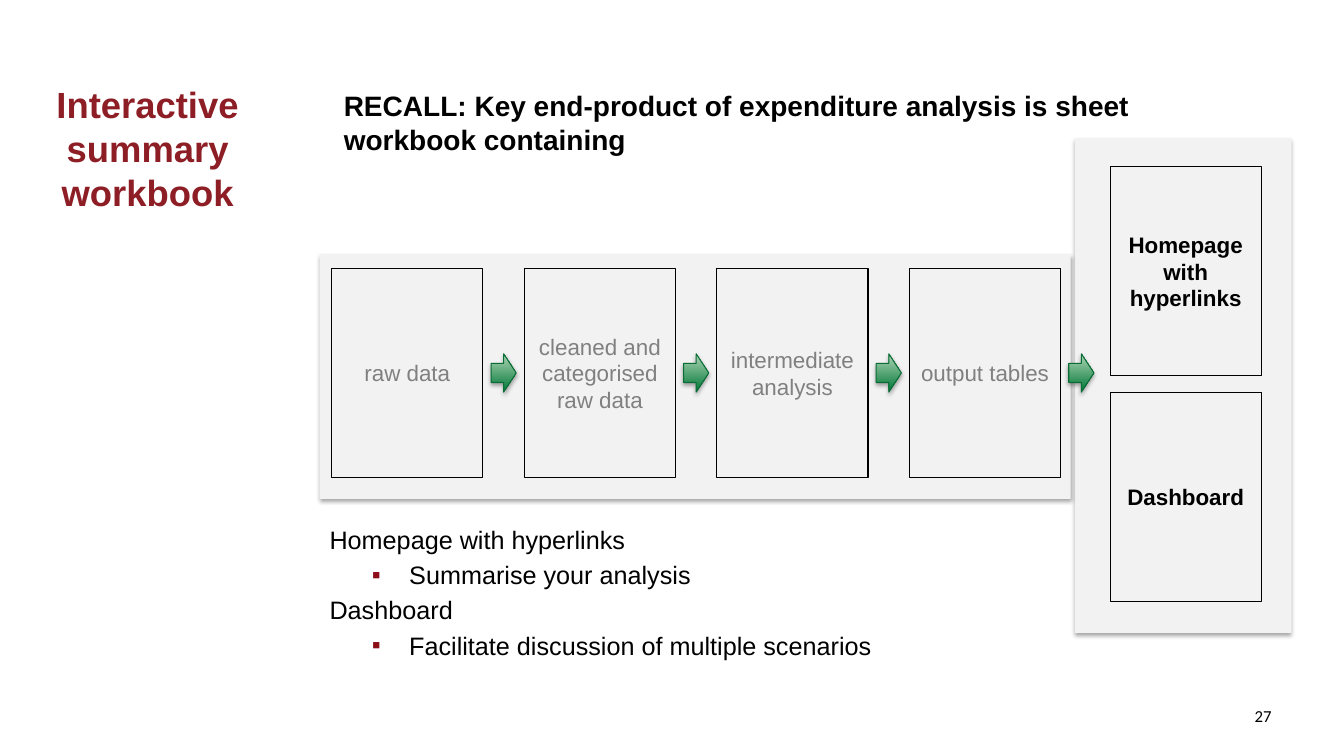
from lxml.etree import SubElement
from pptx import Presentation
from pptx.dml.color import RGBColor
from pptx.enum.shapes import MSO_SHAPE
from pptx.enum.text import MSO_ANCHOR, PP_ALIGN
from pptx.oxml.ns import qn
from pptx.util import Pt

PX = 9144
CARD_WIDTH, CARD_HEIGHT = 150, 208
ARROW_WIDTH, ARROW_HEIGHT = 25, 38
STEP_PITCH = 191
RESULT_PITCH = 224

HEADING = {"size": Pt(26), "bold": True, "color": "8E1E25"}
RECALL = {"size": Pt(20), "bold": True}
STEP = {"size": Pt(16), "color": "808080"}
RESULT = {"size": Pt(16), "bold": True}
POINT = {"size": Pt(18)}
PAGE_NUMBER = {"size": Pt(12), "name": "Calibri"}


def px(*lengths):
    """Turn px lengths into EMU."""
    return [length * PX for length in lengths]


def rgb(hex_string):
    """Turn a hex string into a colour."""
    return RGBColor.from_string(hex_string)


def write(paragraph, words, style, align=PP_ALIGN.LEFT):
    """Fill a paragraph with one styled run."""
    paragraph.alignment = align
    run = paragraph.add_run()
    run.text = words
    values = {"name": "Arial", "color": "000000", **style}
    run.font.color.rgb = rgb(values.pop("color"))
    for attribute, value in values.items():
        setattr(run.font, attribute, value)


def add_label(slide, box, words, style, align=PP_ALIGN.LEFT):
    """Place a wrapping one-paragraph text box and return its frame."""
    frame = slide.shapes.add_textbox(*px(*box)).text_frame
    frame.word_wrap = True
    write(frame.paragraphs[0], words, style, align)
    return frame


def cast_shadow(shape):
    """Give a shape a soft shadow below it."""
    shape.shadow.inherit = False
    effects = shape._element.spPr.find(qn("a:effectLst"))
    shadow = SubElement(effects, qn("a:outerShdw"), blurRad=str(Pt(3.1)),
                        dist=str(Pt(1.8)), dir="5400000", rotWithShape="0")
    color = SubElement(shadow, qn("a:srgbClr"), val="000000")
    SubElement(color, qn("a:alpha"), val="35000")


def add_panel(slide, box):
    """Draw a grey backing panel."""
    panel = slide.shapes.add_shape(MSO_SHAPE.RECTANGLE, *px(*box))
    panel.fill.solid()
    panel.fill.fore_color.rgb = rgb("F2F2F2")
    panel.line.fill.background()
    cast_shadow(panel)


def add_card(slide, left, top, words, style):
    """Draw an outlined card with centred words."""
    card = slide.shapes.add_shape(
        MSO_SHAPE.RECTANGLE, *px(left, top, CARD_WIDTH, CARD_HEIGHT))
    card.shadow.inherit = False
    card.fill.background()
    card.line.color.rgb = rgb("000000")
    card.line.width = Pt(0.75)
    frame = card.text_frame
    frame.word_wrap = True
    frame.vertical_anchor = MSO_ANCHOR.MIDDLE
    write(frame.paragraphs[0], words, style, PP_ALIGN.CENTER)


def add_arrow(slide, left, top):
    """Draw a green arrow to the next stage."""
    arrow = slide.shapes.add_shape(
        MSO_SHAPE.RIGHT_ARROW, *px(left, top, ARROW_WIDTH, ARROW_HEIGHT))
    arrow.fill.gradient()
    arrow.fill.gradient_angle = 90
    for stop, color in zip(arrow.fill.gradient_stops, ("007735", "AFD5B7")):
        stop.color.rgb = rgb(color)
    arrow.line.color.rgb = rgb("086C35")
    arrow.line.width = Pt(0.75)
    cast_shadow(arrow)


def add_results(slide, box, results):
    """Stack the result cards on their panel."""
    add_panel(slide, box)
    left, top = box[:2]
    for row, words in enumerate(results):
        add_card(slide, left + 35, top + 28 + row * RESULT_PITCH, words, RESULT)


def add_process(slide, box, steps):
    """Line up the step cards, each followed by an arrow."""
    add_panel(slide, box)
    left, top = box[0] + 12, box[1] + 14
    for column, words in enumerate(steps):
        step_left = left + column * STEP_PITCH
        add_card(slide, step_left, top, words, STEP)
        add_arrow(slide, step_left + CARD_WIDTH + 8,
                  top + (CARD_HEIGHT - ARROW_HEIGHT) // 2)


def add_points(slide, box, points):
    """List each topic with its bulleted purpose."""
    frame = slide.shapes.add_textbox(*px(*box)).text_frame
    frame.word_wrap = True
    paragraph = frame.paragraphs[0]
    for index, (topic, purpose) in enumerate(points):
        if index:
            paragraph = frame.add_paragraph()
            paragraph.space_before = Pt(3.6)
        write(paragraph, topic, POINT)
        paragraph = frame.add_paragraph()
        paragraph.space_before = Pt(3.6)
        properties = paragraph._p.get_or_add_pPr()
        properties.set("marL", str(79 * PX))
        properties.set("indent", str(-37 * PX))
        bullet_color = SubElement(properties, qn("a:buClr"))
        SubElement(bullet_color, qn("a:srgbClr"), val="8B0E18")
        SubElement(properties, qn("a:buFont"), typeface="Arial")
        SubElement(properties, qn("a:buChar"), char="▪")
        write(paragraph, purpose, POINT)


def main():
    """Build and save the slide."""
    deck = Presentation()
    deck.slide_width, deck.slide_height = px(1333, 750)
    slide = deck.slides.add_slide(deck.slide_layouts[6])
    add_label(slide, (21, 77, 251, 325), "Interactive summary workbook",
              HEADING, PP_ALIGN.CENTER)
    add_results(slide, (1066, 137, 215, 491),
                ["Homepage with hyperlinks", "Dashboard"])
    add_process(slide, (317, 252, 745, 243),
                ["raw data", "cleaned and categorised raw data",
                 "intermediate analysis", "output tables"])
    recall = add_label(
        slide, (330, 83, 913, 92),
        "RECALL: Key end-product of expenditure analysis is sheet workbook containing",
        RECALL)
    recall.margin_left, recall.margin_right = px(11, 11)
    add_points(slide, (317, 515, 852, 149),
               [("Homepage with hyperlinks", "Summarise your analysis"),
                ("Dashboard", "Facilitate discussion of multiple scenarios")])
    add_label(slide, (1195, 695, 76, 39), "27", PAGE_NUMBER, PP_ALIGN.RIGHT)
    deck.save("out.pptx")


if __name__ == "__main__":
    main()
